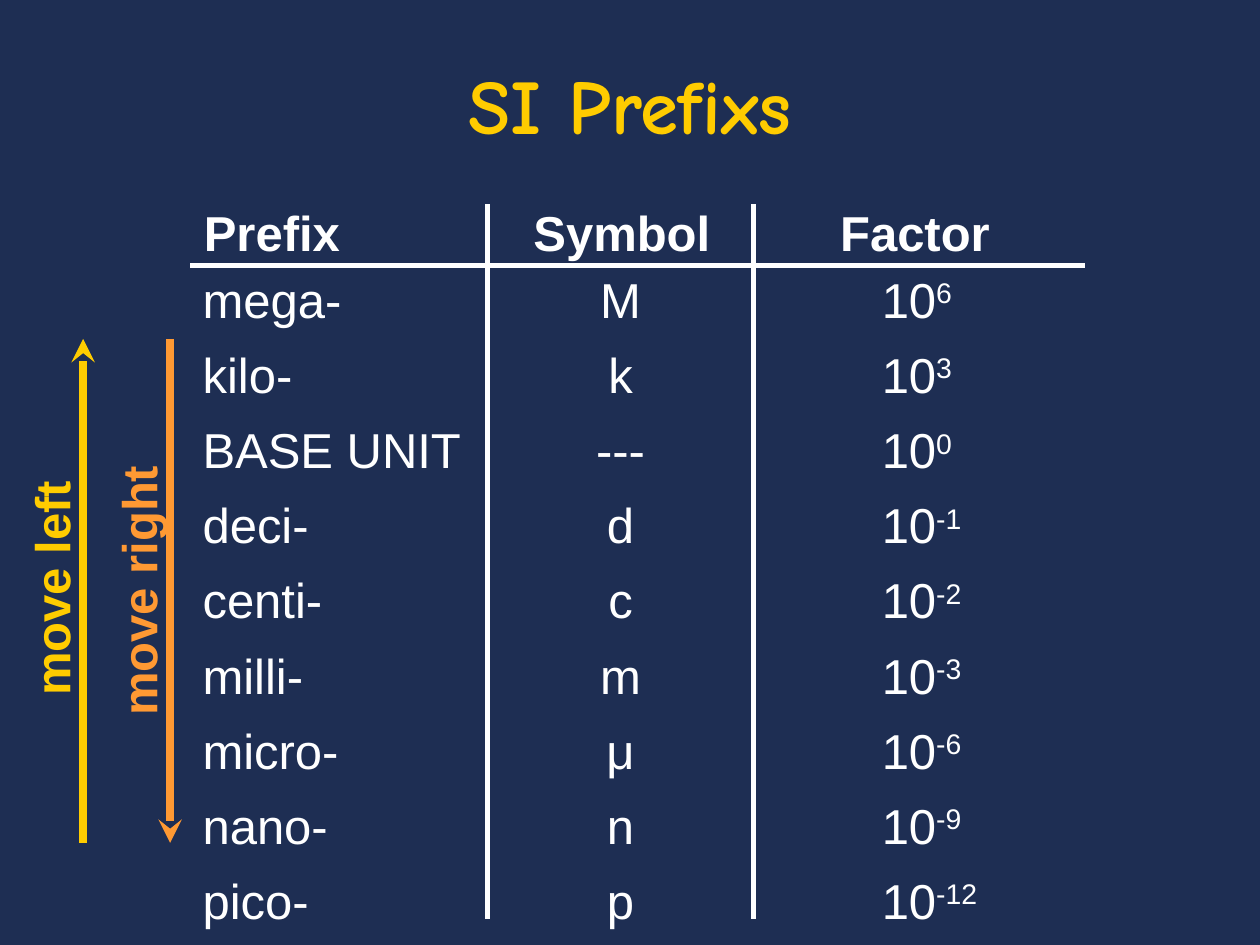
from dataclasses import dataclass

from lxml import etree
from pptx import Presentation
from pptx.dml.color import RGBColor
from pptx.enum.shapes import MSO_CONNECTOR
from pptx.enum.text import MSO_ANCHOR, MSO_AUTO_SIZE, PP_ALIGN
from pptx.oxml.ns import qn
from pptx.util import Inches, Pt

LINE = MSO_CONNECTOR.STRAIGHT
BOTTOM = MSO_ANCHOR.BOTTOM
FIT = MSO_AUTO_SIZE.SHAPE_TO_FIT_TEXT
LEFT, CENTER = PP_ALIGN.LEFT, PP_ALIGN.CENTER


@dataclass(frozen=True)
class Theme:
    back: str = "1E2E53"
    gold: str = "FFCC00"
    orange: str = "FF9933"
    white: str = "FFFFFF"
    head: str = "Comic Neue"
    body: str = "Arial"
    big: float = 44
    text: float = 28
    rule: float = 3
    arrow: float = 4.5


THEME = Theme()
WIDE, HIGH = 10, 7.5
TOP, LAST, TALL = 2.09, 6.86, 0.57
COLS = [(1.51, 2.83, LEFT), (3.51, 2.83, CENTER), (6.9, 1.8, LEFT)]
HEADS = ["Prefix", "Symbol", "Factor"]
HEAD_TOP, HEAD_X = 1.56, [1.52, 3.52, 6.57]
ROWS = [
    ("mega-", "M", "6"),
    ("kilo-", "k", "3"),
    ("BASE UNIT", "---", "0"),
    ("deci-", "d", "-1"),
    ("centi-", "c", "-2"),
    ("milli-", "m", "-3"),
    ("micro-", "μ", "-6"),
    ("nano-", "n", "-9"),
    ("pico-", "p", "-12"),
]
STEP = (LAST - TOP) / (len(ROWS) - 1)
RULES = [(1.51, 2.11, 8.61, 2.11), (3.87, 1.62, 3.87, 7.29), (5.98, 1.62, 5.98, 7.29)]
MOVES = [
    ("move left", THEME.gold, 0.66, 6.69, 2.69, (-0.55, 4.38, 1.91)),
    ("move right", THEME.orange, 1.35, 2.69, 6.69, (0, 4.4, 2.19)),
]


def style(run, size, face, color, bold=False):
    font = run.font
    font.size, font.name, font.bold = Pt(size), face, bold
    font.color.rgb = RGBColor.from_string(color)


def add_title(slide, text):
    title = slide.shapes.title
    title.left, title.top = Inches(0.75), Inches(0.32)
    title.width, title.height = Inches(8.5), Inches(0.92)
    frame = title.text_frame
    frame.text = text
    frame.vertical_anchor = BOTTOM
    para = frame.paragraphs[0]
    para.alignment = CENTER
    style(para.runs[0], THEME.big, THEME.head, THEME.gold, True)


def add_text(shapes, text, left, top, width, align=LEFT,
             color=THEME.white, bold=False, wrap=True, power=None):
    box = shapes.add_textbox(Inches(left), Inches(top), Inches(width), Inches(TALL))
    frame = box.text_frame
    frame.word_wrap = wrap
    frame.auto_size = FIT
    para = frame.paragraphs[0]
    para.text = text
    para.alignment = align
    if power:
        run = para.add_run()
        run.text = power
        run.font._element.set("baseline", "30000")
    for run in para.runs:
        style(run, THEME.text, THEME.body, color, bold)
    return box


def add_line(shapes, ends, color, width, arrow=False):
    line = shapes.add_connector(LINE, *map(Inches, ends))
    line.line.color.rgb = RGBColor.from_string(color)
    line.line.width = Pt(width)
    if arrow:
        tail = etree.SubElement(line.line._get_or_add_ln(), qn("a:tailEnd"))
        tail.set("type", "stealth")
    etree.SubElement(line._element.spPr, qn("a:effectLst"))


def add_row(slide, row, top):
    shapes = slide.shapes.add_group_shape().shapes
    cells = [(row[0], None), (row[1], None), ("10", row[2])]
    for (text, power), (left, width, align) in zip(cells, COLS):
        add_text(shapes, text, left, top, width, align, power=power)


def add_grid(slide):
    for text, left, (_, width, align) in zip(HEADS, HEAD_X, COLS):
        add_text(slide.shapes, text, left, HEAD_TOP, width, align, bold=True)
    for i, row in enumerate(ROWS):
        add_row(slide, row, TOP + i * STEP)
    for ends in RULES:
        add_line(slide.shapes, ends, THEME.white, THEME.rule)


def add_move(slide, text, color, x, start, end, place):
    add_line(slide.shapes, (x, start, x, end), color, THEME.arrow, True)
    box = add_text(slide.shapes, text, *place, color=color, bold=True, wrap=False)
    box.rotation = 270


def main():
    deck = Presentation()
    deck.slide_width, deck.slide_height = Inches(WIDE), Inches(HIGH)
    slide = deck.slides.add_slide(deck.slide_layouts[5])
    fill = slide.background.fill
    fill.solid()
    fill.fore_color.rgb = RGBColor.from_string(THEME.back)
    add_title(slide, "SI Prefixs")
    add_grid(slide)
    for move in MOVES:
        add_move(slide, *move)
    deck.save("out.pptx")


if __name__ == "__main__":
    main()
